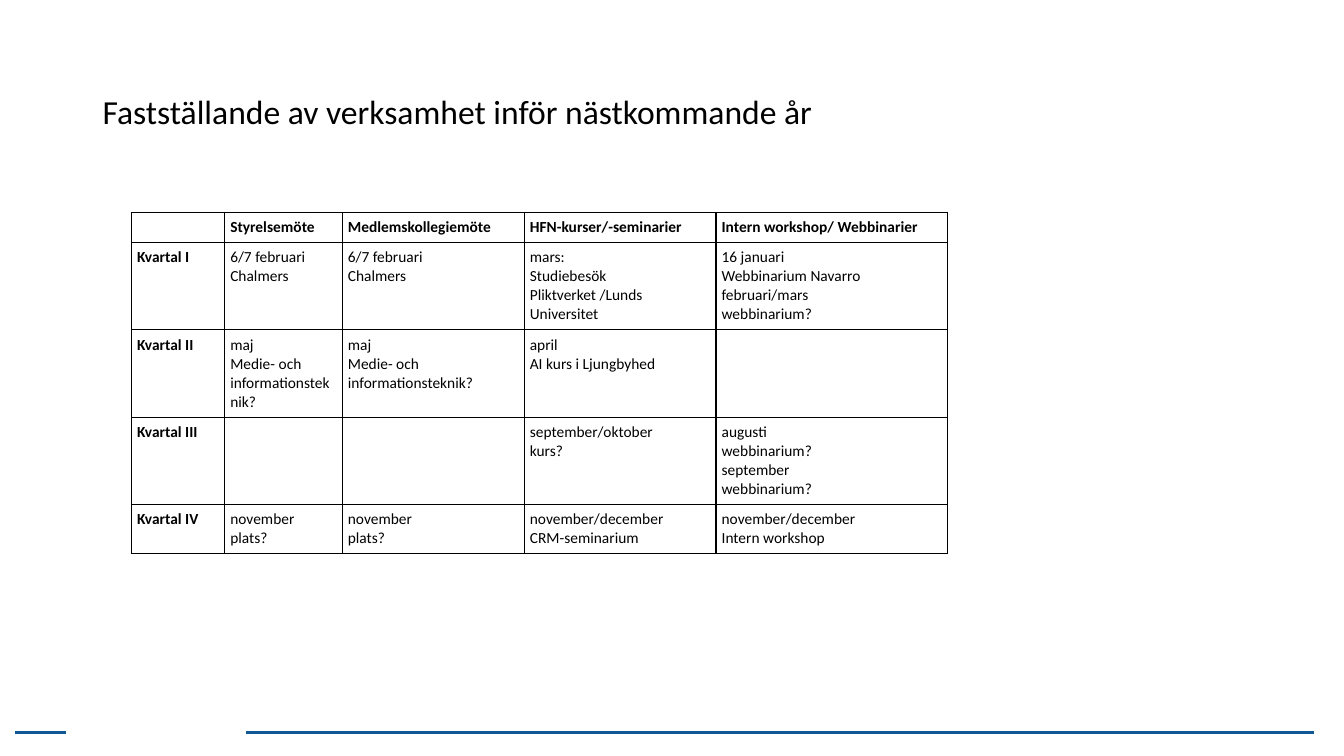
from dataclasses import dataclass

from lxml import etree
from pptx import Presentation, util as u
from pptx.dml.color import RGBColor
from pptx.enum import shapes, text
from pptx.oxml import ns

FONT = "Calibri"
BLACK = "000000"
BLUE = "105895"
CELL_INSET = u.Pt(4)
COLUMN_WIDTHS = [66.5, 84, 130, 137, 165.5]
ROW_HEIGHTS = [21.5, 62.4, 62.4, 62.4, 35]
HEADINGS = ["", "Styrelsemöte", "Medlemskollegiemöte", "HFN-kurser/-seminarier",
            "Intern workshop/ Webbinarier"]


@dataclass
class Quarter:
    name: str
    board: str = ""
    members: str = ""
    courses: str = ""
    workshops: str = ""

    def cells(self) -> list[str]:
        return [self.name, self.board, self.members, self.courses, self.workshops]


@dataclass
class FooterRule:
    start: float
    end: float
    y: float = 523.4


QUARTERS = [
    Quarter("Kvartal I", "6/7 februari\nChalmers", "6/7 februari\nChalmers",
            "mars:\nStudiebesök\nPliktverket /Lunds Universitet",
            "16 januari\nWebbinarium Navarro\nfebruari/mars\nwebbinarium?"),
    Quarter("Kvartal II", "maj\nMedie- och informationsteknik?",
            "maj\nMedie- och informationsteknik?", "april\nAI kurs i Ljungbyhed"),
    Quarter("Kvartal III", courses="september/oktober\nkurs?",
            workshops="augusti\nwebbinarium?\nseptember\nwebbinarium?"),
    Quarter("Kvartal IV", "november\nplats?", "november\nplats?",
            "november/december\nCRM-seminarium", "november/december\nIntern workshop"),
]
FOOTER_RULES = [FooterRule(175.7, 938.9), FooterRule(10.8, 46.8)]


def color(value: str) -> RGBColor:
    return RGBColor.from_string(value)


def write(frame, content: str, *, size: float, bold: bool = False,
          spacing: float = 1.0) -> None:
    frame.word_wrap = True
    for index, line in enumerate(content.split("\n")):
        paragraph = frame.paragraphs[0] if index == 0 else frame.add_paragraph()
        paragraph.line_spacing = spacing
        if not line:
            etree.SubElement(paragraph._p, ns.qn("a:endParaRPr"), sz=str(int(size * 100)))
            continue
        run = paragraph.add_run()
        run.text = line
        run.font.name = FONT
        run.font.size = u.Pt(size)
        run.font.bold = bold
        run.font.color.rgb = color(BLACK)


def add_borders(cell) -> None:
    properties = cell._tc.get_or_add_tcPr()
    for side in ("lnL", "lnR", "lnT", "lnB"):
        border = etree.SubElement(properties, ns.qn(f"a:{side}"), w=str(u.Pt(1)))
        fill = etree.SubElement(border, ns.qn("a:solidFill"))
        etree.SubElement(fill, ns.qn("a:srgbClr"), val=BLACK)


def add_footer_rule(slide, rule: FooterRule) -> None:
    connector = slide.shapes.add_connector(
        shapes.MSO_CONNECTOR.STRAIGHT,
        u.Pt(rule.start), u.Pt(rule.y), u.Pt(rule.end), u.Pt(rule.y))
    connector.line.color.rgb = color(BLUE)
    connector.line.width = u.Pt(2.25)
    etree.SubElement(connector._element.spPr, ns.qn("a:effectLst"))


def add_title(slide, content: str) -> None:
    title = slide.shapes.add_textbox(u.Pt(66.2), u.Pt(28.8), u.Pt(828), u.Pt(104.4))
    title.text_frame.vertical_anchor = text.MSO_ANCHOR.MIDDLE
    write(title.text_frame, content, size=24, spacing=0.9)


def add_schedule(slide) -> None:
    rows = [HEADINGS] + [quarter.cells() for quarter in QUARTERS]
    table = slide.shapes.add_table(
        len(rows), len(HEADINGS), u.Pt(94), u.Pt(151.7),
        u.Pt(sum(COLUMN_WIDTHS)), u.Pt(sum(ROW_HEIGHTS))).table
    table.first_row = False
    table.horz_banding = False
    for column, width in zip(table.columns, COLUMN_WIDTHS):
        column.width = u.Pt(width)
    for row, height in zip(table.rows, ROW_HEIGHTS):
        row.height = u.Pt(height)
    for row_index, contents in enumerate(rows):
        for column_index, content in enumerate(contents):
            cell = table.cell(row_index, column_index)
            cell.margin_left = cell.margin_right = CELL_INSET
            cell.margin_top = cell.margin_bottom = CELL_INSET
            add_borders(cell)
            cell.fill.background()
            write(cell.text_frame, content, size=11,
                  bold=row_index == 0 or column_index == 0)


def main() -> None:
    presentation = Presentation()
    presentation.slide_width = u.Pt(960)
    presentation.slide_height = u.Pt(540)
    slide = presentation.slides.add_slide(presentation.slide_layouts[6])
    for rule in FOOTER_RULES:
        add_footer_rule(slide, rule)
    add_title(slide, "Fastställande av verksamhet inför nästkommande år")
    add_schedule(slide)
    presentation.save("out.pptx")


if __name__ == "__main__":
    main()
